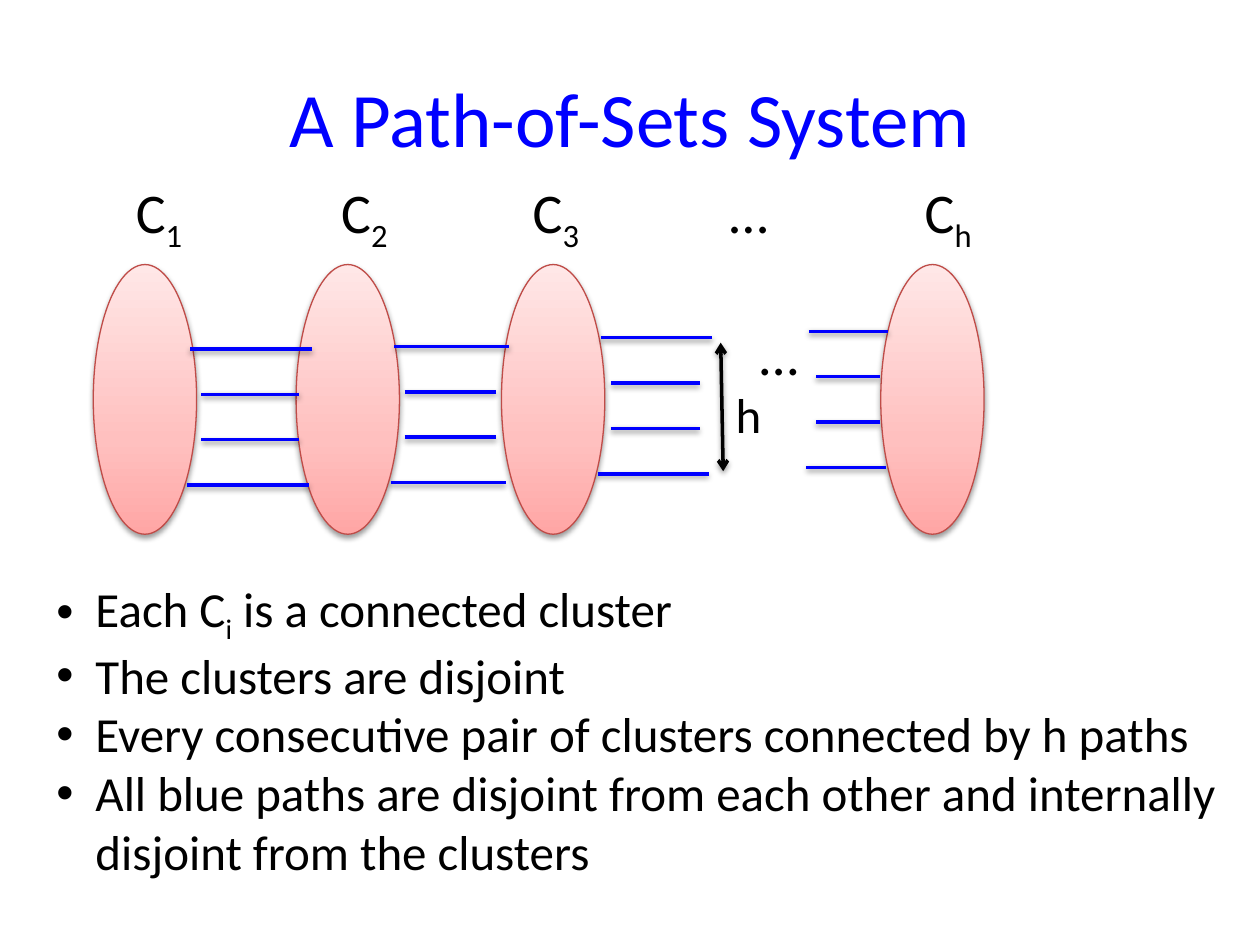
from copy import deepcopy

from lxml import etree
from pptx import Presentation
from pptx import util as u
from pptx.dml.color import RGBColor
from pptx.enum import shapes, text
from pptx.oxml import ns

BLACK = RGBColor(0x00, 0x00, 0x00)
BLUE = RGBColor(0x00, 0x00, 0xFF)
RIM = RGBColor(0xBF, 0x4C, 0x48)
ROSE = [(0, RGBColor(0xFF, 0xA6, 0xA5)),
        (0.35, RGBColor(0xFF, 0xC0, 0xBF)),
        (1, RGBColor(0xFF, 0xE7, 0xE7))]

LABEL_W, LABEL_H = 0.7, 0.64
CLUSTER_W, CLUSTER_H = 0.82, 2.14
CLUSTER_TOP = 2.1
RUNG_GAP = 0.36
# Start and length of each path, as shares of its bundle's width
RUNGS = [(0, 1), (0.09, 0.8), (0.09, 0.8), (-0.03, 1)]

LABELS = [(0.98, "C_1"), (2.61, "C_2"), (4.13, "C_3"), (5.69, "…"), (7.24, "C_h")]
CLUSTERS = [6.99, 3.98, 2.35, 0.74]
BUNDLES = [(1.51, 2.77, 0.97), (3.13, 2.75, 0.91), (4.77, 2.68, 0.88), (6.42, 2.63, 0.63)]
FACTS = [
    "Each C_i is a connected cluster",
    "The clusters are disjoint",
    "Every consecutive pair of clusters connected by h paths",
    "All blue paths are disjoint from each other and internally disjoint from the clusters",
]


def inches(*lengths):
    return [u.Inches(length) for length in lengths]


def add_xml(parent, tag, **attributes):
    return etree.SubElement(parent, ns.qn(tag), attributes)


def add_shadow(part):
    effects = add_xml(part._element.spPr, "a:effectLst")
    shadow = add_xml(effects, "a:outerShdw", blurRad="40000", dist="20000",
                     dir="5400000", rotWithShape="0")
    color = add_xml(shadow, "a:srgbClr", val="000000")
    add_xml(color, "a:alpha", val="38000")


def write(paragraph, words, size, color=BLACK):
    """Fill a paragraph; the letter after an underscore becomes a subscript."""
    paragraph.font.size = u.Pt(size)
    paragraph.font.name = "Calibri"
    paragraph.font.color.rgb = color
    base, _, rest = words.partition("_")
    paragraph.add_run().text = base
    if rest:
        subscript = paragraph.add_run()
        subscript.text = rest[0]
        subscript._r.get_or_add_rPr().set("baseline", "-25000")
    if rest[1:]:
        paragraph.add_run().text = rest[1:]


def add_frame(slide, box):
    frame = slide.shapes.add_textbox(*inches(*box)).text_frame
    frame.word_wrap = True
    return frame


def add_label(slide, box, words, size):
    write(add_frame(slide, box).paragraphs[0], words, size)


def add_title(slide, box, words):
    frame = add_frame(slide, box)
    frame.vertical_anchor = text.MSO_ANCHOR.MIDDLE
    frame.paragraphs[0].alignment = text.PP_ALIGN.CENTER
    write(frame.paragraphs[0], words, 44, BLUE)


def add_facts(slide, box):
    frame = add_frame(slide, box)
    for index, fact in enumerate(FACTS):
        paragraph = frame.add_paragraph() if index else frame.paragraphs[0]
        write(paragraph, fact, 28)
        properties = paragraph._p.get_or_add_pPr()
        indent = u.Inches(0.31)
        properties.set("marL", str(indent))
        properties.set("indent", str(-indent))
        bullet = etree.Element(ns.qn("a:buFont"), typeface="Arial")
        properties.insert(0, bullet)
        bullet.addnext(etree.Element(ns.qn("a:buChar"), char="•"))


def add_cluster(slide, box):
    cluster = slide.shapes.add_shape(shapes.MSO_SHAPE.OVAL, *inches(*box))
    cluster.fill.gradient()
    cluster.fill.gradient_angle = 90
    first = cluster.fill.gradient_stops[0]._gs
    first.addnext(deepcopy(first))
    for stop, (position, color) in zip(cluster.fill.gradient_stops, ROSE):
        stop.position = position
        stop.color.rgb = color
    cluster.line.color.rgb = RIM
    cluster.line.width = u.Pt(0.75)
    add_shadow(cluster)


def add_line(parent, start, end, color):
    line = parent.shapes.add_connector(shapes.MSO_CONNECTOR.STRAIGHT, *inches(*start, *end))
    line.line.color.rgb = color
    line.line.width = u.Pt(2)
    add_shadow(line)
    return line


def add_bundle(slide, left, top, width):
    """Draw the paths that link two neighbouring clusters."""
    bundle = slide.shapes.add_group_shape()
    for row, (start, length) in enumerate(RUNGS):
        x, y = left + start * width, top + row * RUNG_GAP
        add_line(bundle, (x, y), (x + length * width, y), BLUE)


def add_height_arrow(slide, start, end):
    arrow = add_line(slide, start, end, BLACK)
    outline = arrow.line._get_or_add_ln()
    for tag in ("a:headEnd", "a:tailEnd"):
        add_xml(outline, tag, type="arrow")


def add_diagram(slide):
    for left, name in LABELS:
        add_label(slide, (left, 1.36, LABEL_W, LABEL_H), name, 32)
    for left in CLUSTERS:
        add_cluster(slide, (left, CLUSTER_TOP, CLUSTER_W, CLUSTER_H))
    for bundle in BUNDLES:
        add_bundle(slide, *bundle)
    add_height_arrow(slide, (5.72, 2.72), (5.74, 3.74))
    add_label(slide, (5.74, 3, 0.46, 0.57), "h", 28)
    add_label(slide, (5.93, 2.49, LABEL_W, LABEL_H), "…", 32)


def main():
    deck = Presentation()
    deck.slide_width, deck.slide_height = inches(10, 7.5)
    slide = deck.slides.add_slide(deck.slide_layouts[6])
    add_title(slide, (0.5, 0.3, 9, 1.25), "A Path-of-Sets System")
    add_facts(slide, (0.35, 4.54, 9.44, 3.23))
    add_diagram(slide)
    deck.save("out.pptx")


if __name__ == "__main__":
    main()
